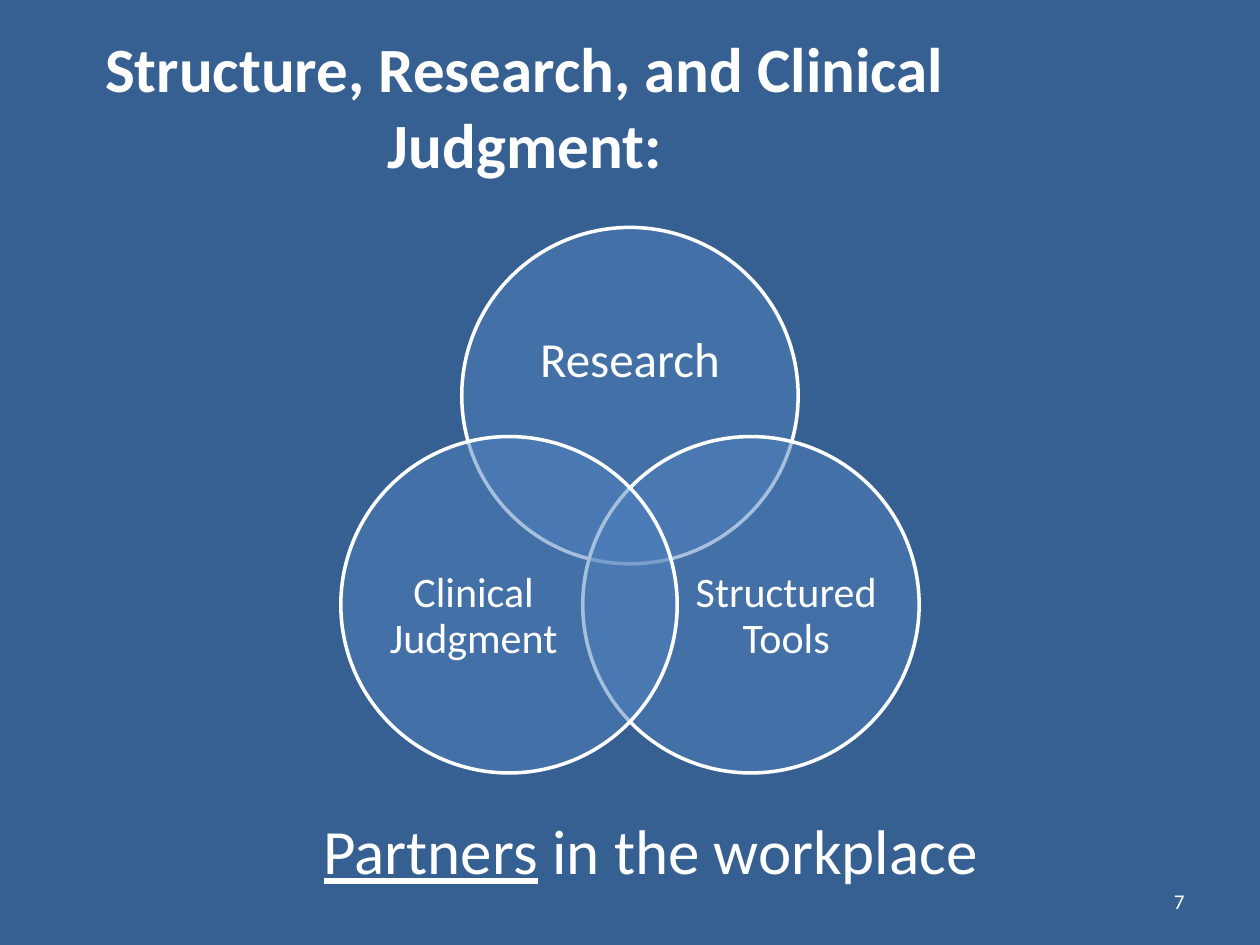
from dataclasses import dataclass

from lxml import etree
from pptx import Presentation
from pptx import util as u
from pptx.dml.color import RGBColor
from pptx.enum import shapes, text
from pptx.oxml.ns import qn


@dataclass(frozen=True)
class Theme:
    font: str = "Calibri"
    background: RGBColor = RGBColor(0x37, 0x60, 0x92)
    circle: RGBColor = RGBColor(0x4F, 0x81, 0xBD)
    light: RGBColor = RGBColor(0xFF, 0xFF, 0xFF)
    circle_opacity: int = 50
    outline: float = 2
    heading_size: int = 36
    large_label_size: int = 28
    label_size: int = 24
    number_size: int = 12


class SlideBuilder:
    def __init__(self, slide, theme):
        self.slide = slide
        self.theme = theme
        slide.background.fill.solid()
        slide.background.fill.fore_color.rgb = theme.background

    def format_text(self, shape, size, align, anchor, bold=False):
        frame = shape.text_frame
        frame.word_wrap = True
        frame.auto_size = text.MSO_AUTO_SIZE.NONE
        frame.vertical_anchor = anchor
        for paragraph in frame.paragraphs:
            paragraph.alignment = align
            for run in paragraph.runs:
                run.font.name = self.theme.font
                run.font.size = u.Pt(size)
                run.font.bold = bold
                run.font.color.rgb = self.theme.light

    def title(self, words, box):
        shape = self.slide.shapes.title
        shape.left, shape.top, shape.width, shape.height = map(u.Inches, box)
        shape.text_frame.text = words
        self.format_text(shape, self.theme.heading_size, text.PP_ALIGN.CENTER,
                         text.MSO_ANCHOR.MIDDLE, bold=True)

    def textbox(self, parts, box, size, align=text.PP_ALIGN.CENTER,
                anchor=text.MSO_ANCHOR.MIDDLE, parent=None):
        """Add a text box with one run for each part."""
        parent = parent or self.slide
        shape = parent.shapes.add_textbox(*map(u.Inches, box))
        for part in parts:
            shape.text_frame.paragraphs[0].add_run().text = part
        self.format_text(shape, size, align, anchor)
        return shape

    def circle(self, group, center_x, center_y, diameter):
        left, top = center_x - diameter / 2, center_y - diameter / 2
        shape = group.shapes.add_shape(
            shapes.MSO_SHAPE.OVAL,
            *map(u.Inches, (left, top, diameter, diameter)))
        shape.shadow.inherit = False
        shape.fill.solid()
        shape.fill.fore_color.rgb = self.theme.circle
        color = shape.fill._xPr.find(qn("a:solidFill"))[0]
        alpha = etree.SubElement(color, qn("a:alpha"))
        alpha.set("val", str(self.theme.circle_opacity * 1000))
        shape.line.color.rgb = self.theme.light
        shape.line.width = u.Pt(self.theme.outline)

    def label(self, group, words, box, size):
        shape = self.textbox([words], box, size, parent=group)
        frame = shape.text_frame
        frame.margin_left = frame.margin_right = 0
        frame.margin_top = frame.margin_bottom = 0
        frame.paragraphs[0].line_spacing = 0.9

    def venn(self, circles, center, diameter):
        """Draw circles at offsets from the center of the top one."""
        group = self.slide.shapes.add_group_shape()
        for words, offset, box, size in circles:
            self.circle(group, center[0] + offset[0],
                        center[1] + offset[1], diameter)
            self.label(group, words, box, size)


def main():
    presentation = Presentation()
    presentation.slide_width = u.Inches(10)
    presentation.slide_height = u.Inches(7.5)
    theme = Theme()
    title_only = presentation.slide_layouts[5]
    builder = SlideBuilder(presentation.slides.add_slide(title_only), theme)

    # Slide number and title
    builder.textbox(["7"], (7.17, 6.95, 2.33, 0.4), theme.number_size,
                    align=text.PP_ALIGN.RIGHT)
    builder.title("Structure, Research, and Clinical Judgment:",
                  (0, 0.17, 8.33, 1.33))

    # Closing line
    closing = builder.textbox(["Partners", " in the workplace"],
                              (0.83, 6.39, 8.67, 0.71), theme.heading_size,
                              anchor=text.MSO_ANCHOR.TOP)
    closing.text_frame.paragraphs[0].runs[0].font.underline = True

    # Three overlapping circles, each with its label
    across, down = 0.96, 1.66
    builder.venn([
        ("Research", (0, 0), (4.02, 2.27, 1.96, 1.2), theme.large_label_size),
        ("Structured Tools", (across, down), (5.44, 4.16, 1.6, 1.47),
         theme.label_size),
        ("Clinical Judgment", (-across, down), (2.96, 4.16, 1.6, 1.47),
         theme.label_size),
    ], center=(5, 3.14), diameter=2.67)

    presentation.save("out.pptx")


if __name__ == "__main__":
    main()
